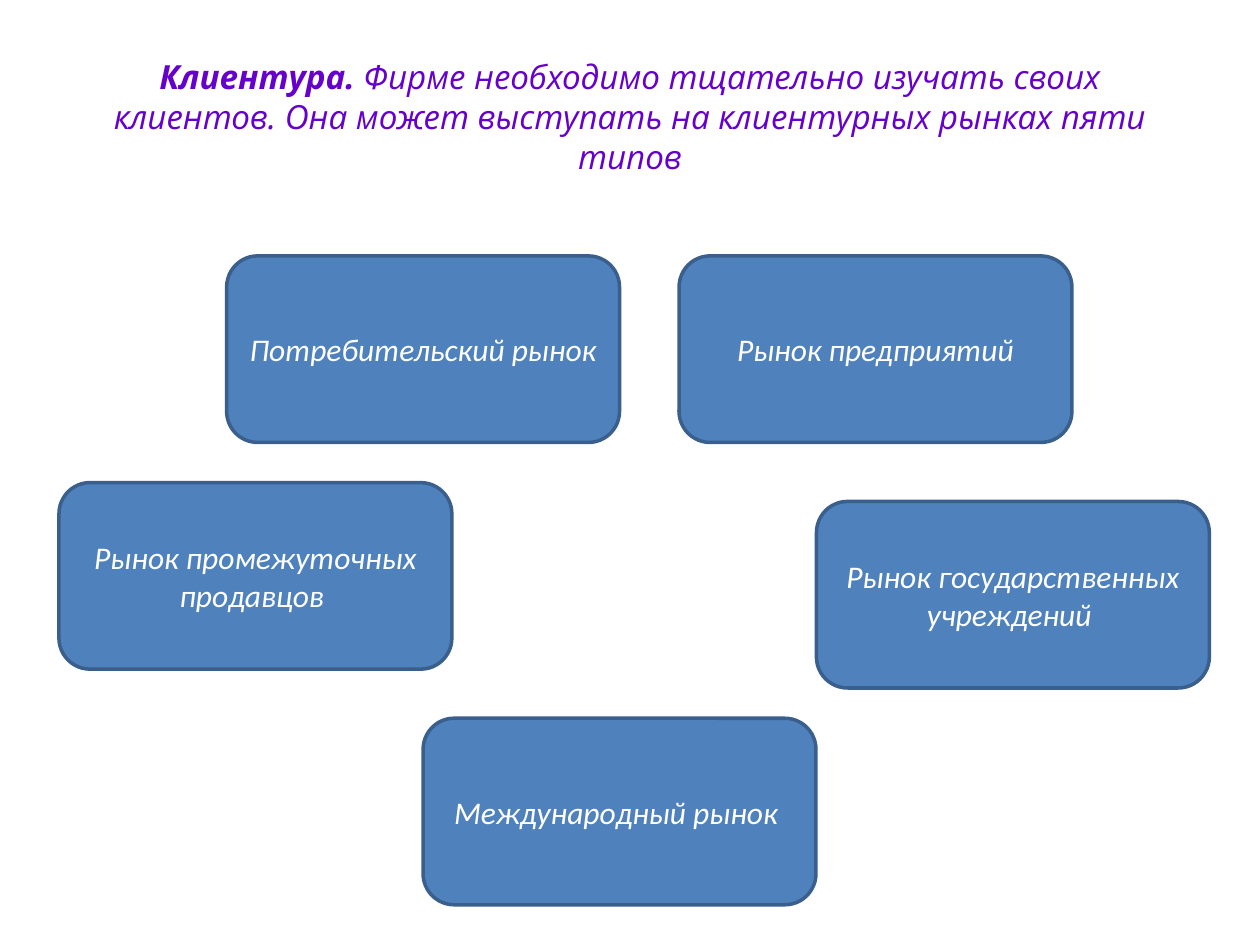
"""Build a slide showing the five types of customer markets."""
from pptx import Presentation
from pptx.dml.color import RGBColor
from pptx.enum.shapes import MSO_SHAPE
from pptx.enum.text import MSO_ANCHOR, PP_ALIGN
from pptx.util import Cm, Pt

ROUNDED = MSO_SHAPE.ROUNDED_RECTANGLE
MIDDLE = MSO_ANCHOR.MIDDLE
CENTER = PP_ALIGN.CENTER

COLORS = {"heading": "6600CC", "fill": "4F81BD", "border": "3A5F8C", "label": "FFFFFF"}
MARKET_WIDTH, MARKET_HEIGHT = Cm(7.92), Cm(3.76)
MARKETS = [
    ("Потребительский рынок ", 4.57, 5.16),
    ("Рынок предприятий", 13.69, 5.16),
    ("Рынок промежуточных продавцов ", 1.19, 9.73),
    ("Рынок государственных учреждений ", 16.46, 10.11),
    ("Международный рынок ", 8.53, 14.48),
]


def format_paragraph(paragraph, font_name, size, color):
    paragraph.alignment = CENTER
    font = paragraph.font
    font.name = font_name
    font.size = Pt(size)
    font.italic = True
    font.color.rgb = RGBColor.from_string(COLORS[color])


presentation = Presentation()
presentation.slide_width = Cm(25.4)
presentation.slide_height = Cm(19.05)
slide = presentation.slides.add_slide(presentation.slide_layouts[5])

heading = slide.shapes.title
heading.left, heading.top = Cm(1.27), Cm(0.76)
heading.width, heading.height = Cm(22.86), Cm(3.18)
heading.text_frame.vertical_anchor = MIDDLE
heading_line = heading.text_frame.paragraphs[0]
format_paragraph(heading_line, "Open Sans", 19, "heading")
term = heading_line.add_run()
term.text = "Клиентура. "
term.font.bold = True
explanation = heading_line.add_run()
explanation.text = (
    "Фирме необходимо тщательно изучать своих клиентов. "
    "Она может выступать на клиентурных рынках пяти типов"
)

for label, left, top in MARKETS:
    market = slide.shapes.add_shape(ROUNDED, Cm(left), Cm(top), MARKET_WIDTH, MARKET_HEIGHT)
    market.shadow.inherit = False
    market.fill.solid()
    market.fill.fore_color.rgb = RGBColor.from_string(COLORS["fill"])
    market.line.color.rgb = RGBColor.from_string(COLORS["border"])
    market.line.width = Pt(2)
    market.text_frame.word_wrap = True
    market.text_frame.vertical_anchor = MIDDLE
    market.text_frame.text = label
    format_paragraph(market.text_frame.paragraphs[0], "Calibri", 18, "label")

presentation.save("out.pptx")
